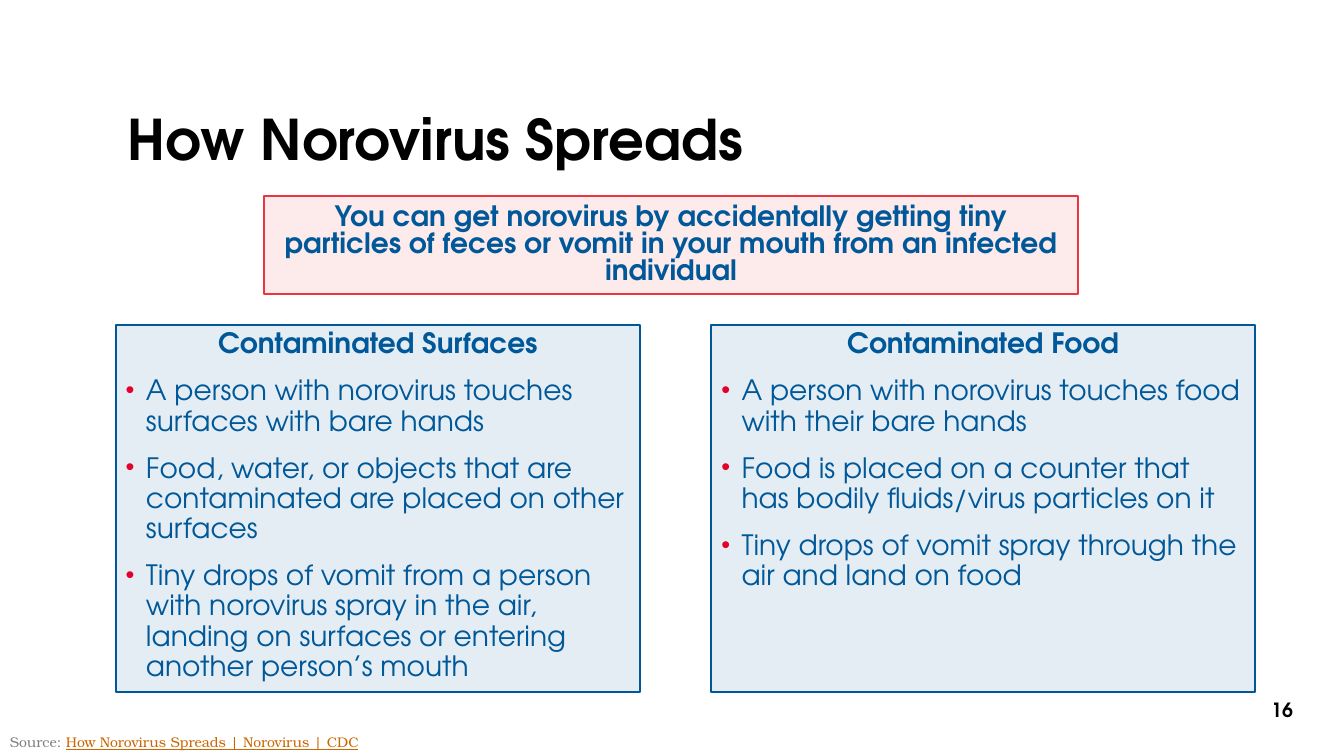
from lxml import etree
from pptx import Presentation
from pptx import util as u
from pptx.dml.color import RGBColor
from pptx.enum import shapes, text
from pptx.oxml.ns import qn

BLUE, RED, BULLET_RED = "005899", "ED3441", "E4002B"
SANS, SERIF = "TeX Gyre Adventor", "TeX Gyre Bonum"


def add_panel(slide, left, top, width, height, color):
    panel = slide.shapes.add_shape(
        shapes.MSO_SHAPE.RECTANGLE, u.Cm(left), u.Cm(top), u.Cm(width), u.Cm(height))
    panel.shadow.inherit = False
    panel.fill.solid()
    panel.fill.fore_color.rgb = RGBColor.from_string(color)
    fill_color = panel.fill._xPr.find(qn("a:solidFill"))[0]
    etree.SubElement(fill_color, qn("a:alpha"), val="10000")
    panel.line.color.rgb = RGBColor.from_string(color)
    panel.line.width = u.Pt(1.5)
    panel.text_frame.word_wrap = True
    return panel.text_frame


def style(paragraph, size, color, bold=False, font=SANS):
    paragraph.font.name = font
    paragraph.font.size = u.Pt(size)
    paragraph.font.bold = bold
    paragraph.font.color.rgb = RGBColor.from_string(color)


presentation = Presentation()
presentation.slide_width = u.Cm(33.87)
presentation.slide_height = u.Cm(19.05)
slide = presentation.slides.add_slide(presentation.slide_layouts[6])

labels = [
    ("How Norovirus Spreads", 2.97, 1.35, 27.94, 4.47, 40, text.PP_ALIGN.LEFT),
    ("16", 31.42, 17.42, 1.78, 1.02, 14, text.PP_ALIGN.CENTER),
]
for wording, left, top, width, height, size, alignment in labels:
    frame = slide.shapes.add_textbox(
        u.Cm(left), u.Cm(top), u.Cm(width), u.Cm(height)).text_frame
    frame.word_wrap = True
    frame.vertical_anchor = text.MSO_ANCHOR.MIDDLE
    paragraph = frame.paragraphs[0]
    paragraph.text = wording
    paragraph.alignment = alignment
    paragraph.line_spacing = 0.9
    style(paragraph, size, "000000", bold=True)

frame = add_panel(slide, 6.65, 4.95, 20.52, 2.46, RED)
frame.vertical_anchor = text.MSO_ANCHOR.MIDDLE
paragraph = frame.paragraphs[0]
paragraph.text = ("You can get norovirus by accidentally getting tiny particles of "
                  "feces or vomit in your mouth from an infected individual")
paragraph.alignment = text.PP_ALIGN.CENTER
paragraph.line_spacing = 0.8
style(paragraph, 20, BLUE, bold=True)

routes = [
    (2.92, 13.21, "Contaminated Surfaces", [
        "A person with norovirus touches surfaces with bare hands",
        "Food, water, or objects that are contaminated are placed on other surfaces",
        "Tiny drops of vomit from a person with norovirus spray in the air, "
        "landing on surfaces or entering another person’s mouth",
    ]),
    (17.93, 13.69, "Contaminated Food", [
        "A person with norovirus touches food with their bare hands",
        "Food is placed on a counter that has bodily fluids/virus particles on it",
        "Tiny drops of vomit spray through the air and land on food",
    ]),
]
for left, width, heading, points in routes:
    frame = add_panel(slide, left, 8.18, width, 9.25, BLUE)
    frame.vertical_anchor = text.MSO_ANCHOR.TOP
    paragraph = frame.paragraphs[0]
    paragraph.text = heading
    paragraph.alignment = text.PP_ALIGN.CENTER
    paragraph.line_spacing = 0.9
    style(paragraph, 20, BLUE, bold=True)
    for point in points:
        paragraph = frame.add_paragraph()
        paragraph.text = point
        paragraph.alignment = text.PP_ALIGN.LEFT
        paragraph.line_spacing = 0.9
        paragraph.space_before = u.Pt(12)
        properties = paragraph._p.get_or_add_pPr()
        properties.set("marL", str(u.Cm(0.51)))
        properties.set("indent", str(u.Cm(-0.51)))
        bullet_color = etree.SubElement(properties, qn("a:buClr"))
        etree.SubElement(bullet_color, qn("a:srgbClr"), val=BULLET_RED)
        etree.SubElement(properties, qn("a:buSzPct"), val="90000")
        etree.SubElement(properties, qn("a:buFont"), typeface="Arial")
        etree.SubElement(properties, qn("a:buChar"), char="•")
        style(paragraph, 20, BLUE)

source_frame = slide.shapes.add_textbox(
    u.Cm(0), u.Cm(18.36), u.Cm(18.03), u.Cm(0.69)).text_frame
source_frame.word_wrap = True
paragraph = source_frame.paragraphs[0]
style(paragraph, 10, "808080", font=SERIF)
paragraph.add_run().text = "Source: "
citation = paragraph.add_run()
citation.text = "How Norovirus Spreads | Norovirus | CDC"
citation.font.underline = True
citation.font.color.rgb = RGBColor.from_string("CC6600")

presentation.save("out.pptx")
